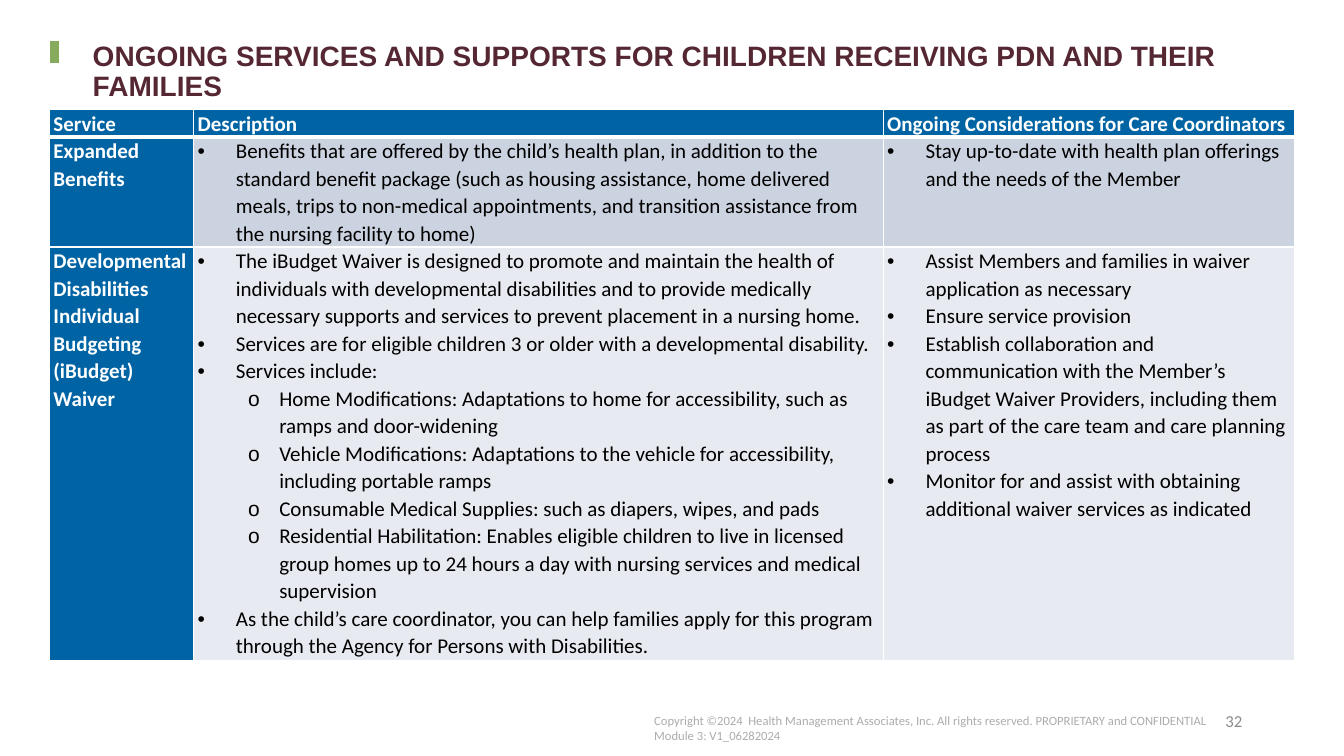
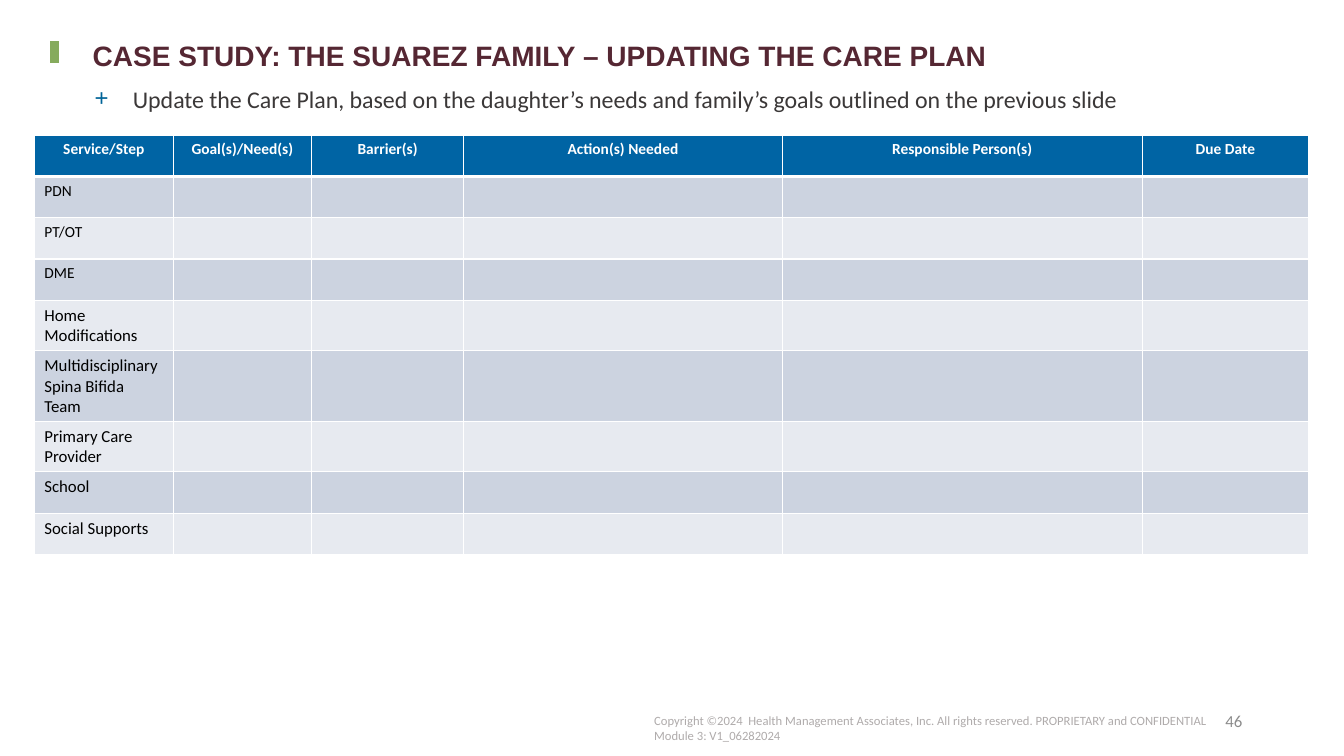
from collections import namedtuple

from lxml.etree import SubElement
from pptx import Presentation
from pptx.dml.color import RGBColor
from pptx.enum.shapes import MSO_CONNECTOR as Connector
from pptx.enum.text import MSO_ANCHOR as Anchor, PP_ALIGN as Align
from pptx.oxml.ns import qn
from pptx.util import Emu, Pt

EMU_PER_PX = 9144
COLORS = {
    "title": "552733",
    "accent": "86AB5D",
    "header": "0064A4",
    "band_dark": "CCD3E0",
    "band_light": "E7EAF0",
    "white": "FFFFFF",
    "black": "000000",
    "body": "3B3838",
    "plus": "006498",
    "footer": "AFABAB",
    "number": "8C8C8C",
}
FOOTER = [
    "Copyright ©2024  Health Management Associates, Inc. All rights reserved. "
    "PROPRIETARY and CONFIDENTIAL",
    "Module 3: V1_06282024",
]
Bullet = namedtuple("Bullet", "char left hang level color")
DOT = Bullet("•", 38, 38, 0, None)
CIRCLE = Bullet("o", 81, 31, 1, None)
PLUS = Bullet("+", 88, 38, 1, "plus")


def px(length):
    return Emu(length * EMU_PER_PX)


def rgb(name):
    return RGBColor.from_string(COLORS[name])


def add_bullet(paragraph, bullet):
    paragraph.level = bullet.level
    properties = paragraph._p.get_or_add_pPr()
    properties.set("marL", str(px(bullet.left)))
    properties.set("indent", str(-px(bullet.hang)))
    if bullet.color:
        color = SubElement(properties, qn("a:buClr"))
        SubElement(color, qn("a:srgbClr"), val=COLORS[bullet.color])
    SubElement(properties, qn("a:buFont"), typeface="Arial")
    SubElement(properties, qn("a:buChar"), char=bullet.char)


def write(frame, text, size=12, color="black", font="Calibri", bold=False,
          align=Align.LEFT, spacing=None, bullet=None):
    paragraph = frame.paragraphs[-1]
    if paragraph.runs:
        paragraph = frame.add_paragraph()
    if bullet:
        add_bullet(paragraph, bullet)
    paragraph.alignment = align
    if spacing:
        paragraph.line_spacing = spacing
    run = paragraph.add_run()
    run.text = text
    run.font.size = Pt(size)
    run.font.name = font
    run.font.bold = bold
    run.font.color.rgb = rgb(color)


def set_borders(cell, top=1, bottom=1):
    properties = cell._tc.get_or_add_tcPr()
    for side, width in (("L", 1), ("R", 1), ("T", top), ("B", bottom)):
        line = SubElement(properties, qn(f"a:ln{side}"), w=str(Pt(width)))
        fill = SubElement(line, qn("a:solidFill"))
        SubElement(fill, qn("a:srgbClr"), val=COLORS["white"])


def dots(*texts):
    return [(text, DOT) for text in texts]


def circles(*texts):
    return [(text, CIRCLE) for text in texts]


class Deck:
    def __init__(self):
        self.presentation = Presentation()
        self.presentation.slide_width = px(1333)
        self.presentation.slide_height = px(750)
        self.slide = None

    def add_slide(self, title, number):
        layout = self.presentation.slide_layouts[6]
        self.slide = self.presentation.slides.add_slide(layout)
        self.add_line(54, 41, 54, 63, "accent", 7)
        title_frame = self.add_frame(92, 42, 1150, 30, inset=0)
        write(title_frame, title, size=20, color="title", font="Arial",
              bold=True, spacing=0.9)
        footer_frame = self.add_frame(639, 702, 574, 40)
        for line in FOOTER:
            write(footer_frame, line, size=9, color="footer")
        number_frame = self.add_frame(942, 695, 300, 40)
        number_frame.vertical_anchor = Anchor.MIDDLE
        write(number_frame, number, color="number", align=Align.RIGHT)

    def add_line(self, x1, y1, x2, y2, color, width):
        line = self.slide.shapes.add_connector(
            Connector.STRAIGHT, px(x1), px(y1), px(x2), px(y2))
        line.line.color.rgb = rgb(color)
        line.line.width = Pt(width)
        SubElement(line._element.spPr, qn("a:effectLst"))

    def add_frame(self, left, top, width, height, inset=None):
        box = self.slide.shapes.add_textbox(
            px(left), px(top), px(width), px(height))
        frame = box.text_frame
        frame.word_wrap = True
        if inset is not None:
            frame.margin_left = frame.margin_right = px(inset)
            frame.margin_top = frame.margin_bottom = px(inset)
        return frame

    def add_table(self, left, top, widths, heights, rows, size, header_align=Align.LEFT,
                  header_column=False, spacing=None, margins=(10, 5), row_sizes=None):
        table = self.slide.shapes.add_table(
            len(heights), len(widths), px(left), px(top),
            px(sum(widths)), px(sum(heights))).table
        table.horz_banding = False
        table.first_col = header_column
        for column, width in zip(table.columns, widths):
            column.width = px(width)
        for row, height in zip(table.rows, heights):
            row.height = px(height)
        for r, row in enumerate(rows):
            for c in range(len(widths)):
                cell = table.cell(r, c)
                is_header = r == 0 or (header_column and c == 0)
                band = "band_dark" if r % 2 else "band_light"
                set_borders(cell, top=3 if r == 1 else 1, bottom=3 if r == 0 else 1)
                cell.fill.solid()
                cell.fill.fore_color.rgb = rgb("header" if is_header else band)
                cell.margin_left = cell.margin_right = px(margins[0])
                cell.margin_top = cell.margin_bottom = px(margins[1])
                content = row[c] if c < len(row) else []
                if isinstance(content, str):
                    content = [(content, None)]
                for text, bullet in content:
                    write(cell.text_frame, text, bullet=bullet, spacing=spacing,
                          size=row_sizes[r] if row_sizes else size,
                          color="white" if is_header else "black", bold=is_header,
                          align=header_align if r == 0 else Align.LEFT)


def build_services(deck):
    deck.add_slide("ONGOING SERVICES AND SUPPORTS FOR CHILDREN RECEIVING PDN "
                   "AND THEIR FAMILIES", "32")
    rows = [
        ["Service", "Description", "Ongoing Considerations for Care Coordinators"],
        [
            "Expanded Benefits",
            dots("Benefits that are offered by the child’s health plan, in addition to "
                 "the standard benefit package (such as housing assistance, home "
                 "delivered meals, trips to non-medical appointments, and transition "
                 "assistance from the nursing facility to home)"),
            dots("Stay up-to-date with health plan offerings and the needs of the Member"),
        ],
        [
            "Developmental Disabilities Individual Budgeting (iBudget) Waiver",
            dots("The iBudget Waiver is designed to promote and maintain the health of "
                 "individuals with developmental disabilities and to provide medically "
                 "necessary supports and services to prevent placement in a nursing home.",
                 "Services are for eligible children 3 or older with a developmental "
                 "disability.",
                 "Services include:")
            + circles("Home Modifications: Adaptations to home for accessibility, such as "
                      "ramps and door-widening",
                      "Vehicle Modifications: Adaptations to the vehicle for "
                      "accessibility, including portable ramps",
                      "Consumable Medical Supplies: such as diapers, wipes, and pads",
                      "Residential Habilitation: Enables eligible children to live in "
                      "licensed group homes up to 24 hours a day with nursing services "
                      "and medical supervision")
            + dots("As the child’s care coordinator, you can help families apply for this "
                   "program through the Agency for Persons with Disabilities."),
            dots("Assist Members and families in waiver application as necessary",
                 "Ensure service provision",
                 "Establish collaboration and communication with the Member’s iBudget "
                 "Waiver Providers, including them as part of the care team and care "
                 "planning process",
                 "Monitor for and assist with obtaining additional waiver services as "
                 "indicated"),
        ],
    ]
    deck.add_table(49, 109, [143, 684, 408], [27, 109, 410], rows, size=15,
                   header_column=True, spacing=1.07, margins=(4, 0))


def build_care_plan(deck):
    deck.add_slide("CASE STUDY: THE SUAREZ FAMILY – UPDATING THE CARE PLAN", "46")
    write(deck.add_frame(34, 87, 1150, 45),
          "Update the Care Plan, based on the daughter’s needs and family’s goals "
          "outlined on the previous slide",
          size=17.1, color="body", spacing=0.7, bullet=PLUS)
    headers = ["Service/Step", "Goal(s)/Need(s)", "Barrier(s)", "Action(s) Needed",
               "Responsible Person(s)", "Due Date"]
    services = ["PDN", "PT/OT", "DME", "Home Modifications",
                "Multidisciplinary Spina Bifida Team", "Primary Care Provider",
                "School", "Social Supports"]
    rows = [headers] + [[service] for service in services]
    deck.add_table(34, 134, [138, 137, 151, 316, 357, 165], [41] * len(rows), rows,
                   size=12, header_align=Align.CENTER, row_sizes=[11] * 4 + [12] * 5)


def main():
    deck = Deck()
    build_services(deck)
    build_care_plan(deck)
    deck.presentation.save("out.pptx")


if __name__ == "__main__":
    main()
